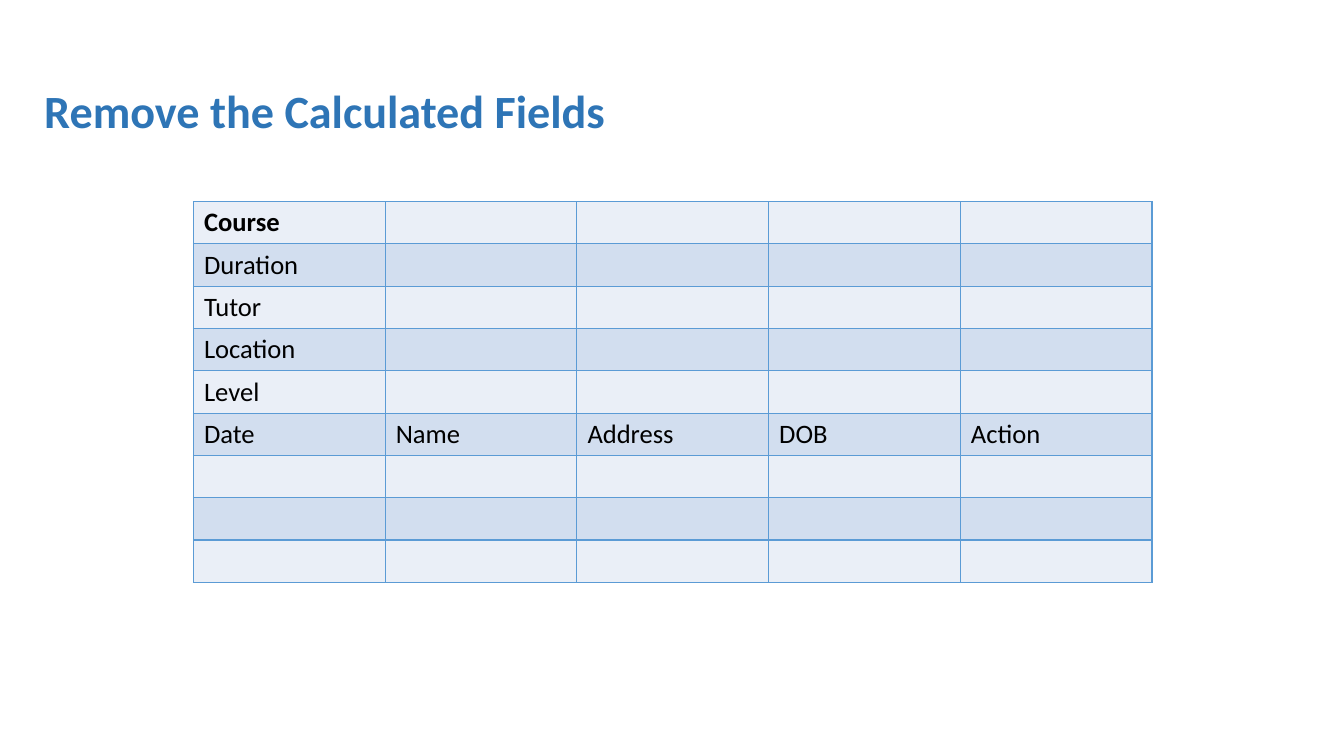
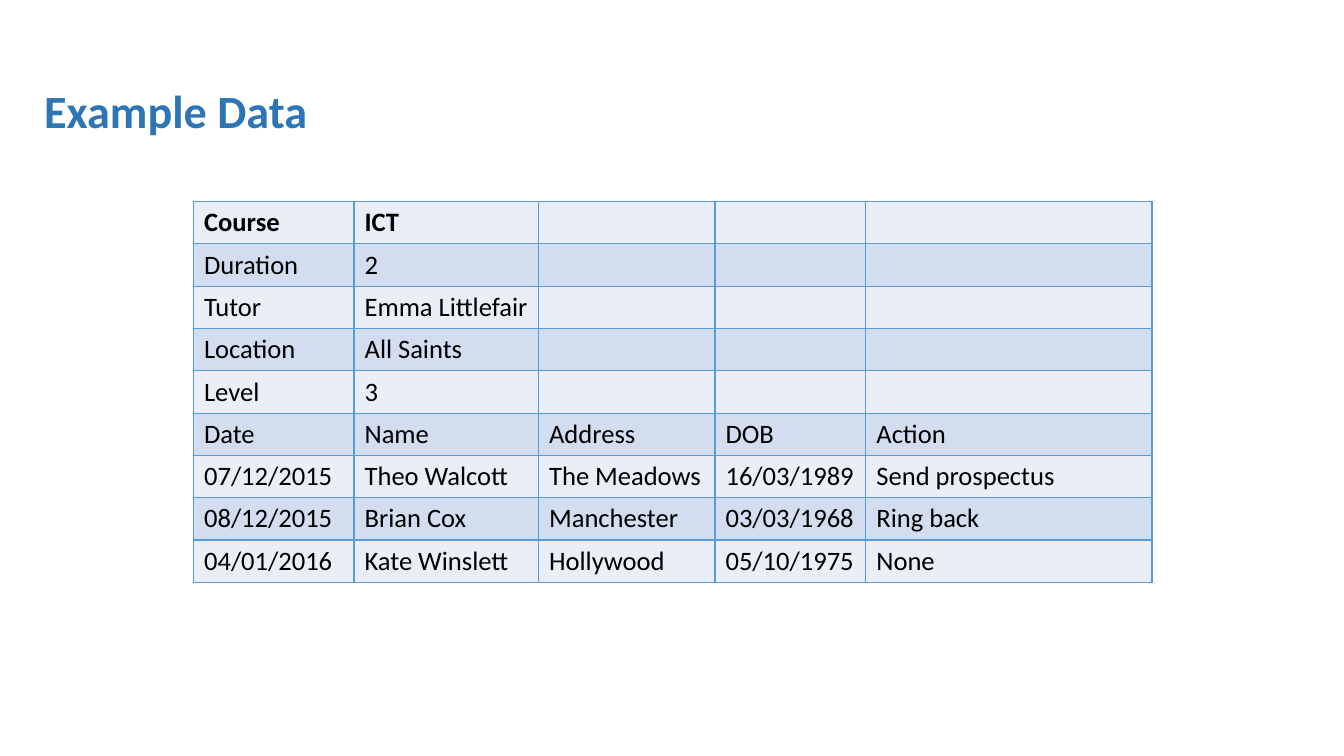
from dataclasses import dataclass

from lxml.etree import SubElement
from pptx import Presentation
from pptx.dml.color import RGBColor
from pptx.enum.text import MSO_ANCHOR
from pptx.oxml.ns import qn
from pptx.util import Pt

# Shared style
FONT = "Calibri"
TITLE_COLOUR = "2E75B6"
TEXT_COLOUR = "000000"
BORDER_COLOUR = "5B9BD5"
BAND_FILLS = ("EAEFF7", "D2DEEF")
TITLE_SIZE = 33
CELL_SIZE = 19

# Shared geometry, in points
SLIDE_WIDTH, SLIDE_HEIGHT = 960, 540
TITLE_FRAME = (24.5, 28.8, 913, 104.4)
TABLE_LEFT, TABLE_TOP = 138.2, 144
ROW_HEIGHT = 30.24
CELL_MARGIN_X, CELL_MARGIN_Y = 7.6, 3.6

COLUMN_HEADINGS = ("Date", "Name", "Address", "DOB", "Action")


@dataclass(frozen=True)
class FormSlide:
    title: str
    column_widths: tuple[float, ...]
    rows: tuple[tuple[str, ...], ...]


FORM_SLIDES = (
    FormSlide(
        "Remove the Calculated Fields",
        (136.95,) * 5,
        (("Course",), ("Duration",), ("Tutor",), ("Location",), ("Level",),
         COLUMN_HEADINGS, (), (), ()),
    ),
    FormSlide(
        "Example Data",
        (114.7, 131.8, 126, 107.8, 204.5),
        (
            ("Course", "ICT"),
            ("Duration", "2"),
            ("Tutor", "Emma Littlefair"),
            ("Location", "All Saints"),
            ("Level", "3"),
            COLUMN_HEADINGS,
            ("07/12/2015", "Theo Walcott", "The Meadows", "16/03/1989", "Send prospectus"),
            ("08/12/2015", "Brian Cox", "Manchester", "03/03/1968", "Ring back"),
            ("04/01/2016", "Kate Winslett", "Hollywood", "05/10/1975", "None"),
        ),
    ),
)


def colour(value: str) -> RGBColor:
    return RGBColor.from_string(value)


def add_span(para, text: str, size: float, text_colour: str, bold: bool) -> None:
    span = para.add_run()
    span.text = text
    span.font.name = FONT
    span.font.size = Pt(size)
    span.font.bold = bold
    span.font.color.rgb = colour(text_colour)


def add_title(page, text: str) -> None:
    box = page.shapes.add_textbox(*map(Pt, TITLE_FRAME))
    frame = box.text_frame
    frame.word_wrap = True
    frame.vertical_anchor = MSO_ANCHOR.MIDDLE
    para = frame.paragraphs[0]
    para.line_spacing = 0.9
    add_span(para, text, TITLE_SIZE, TITLE_COLOUR, bold=True)


def add_borders(cell) -> None:
    properties = cell._tc.get_or_add_tcPr()
    for side in ("a:lnL", "a:lnR", "a:lnT", "a:lnB"):
        line = SubElement(properties, qn(side), w=str(Pt(1)))
        fill = SubElement(line, qn("a:solidFill"))
        SubElement(fill, qn("a:srgbClr"), val=BORDER_COLOUR)


def style_cell(cell, fill: str) -> None:
    cell.margin_left = cell.margin_right = Pt(CELL_MARGIN_X)
    cell.margin_top = cell.margin_bottom = Pt(CELL_MARGIN_Y)
    add_borders(cell)
    cell.fill.solid()
    cell.fill.fore_color.rgb = colour(fill)


def add_form_table(page, form: FormSlide) -> None:
    row_count, column_count = len(form.rows), len(form.column_widths)
    table = page.shapes.add_table(
        row_count, column_count, Pt(TABLE_LEFT), Pt(TABLE_TOP),
        Pt(sum(form.column_widths)), Pt(ROW_HEIGHT * row_count),
    ).table
    table.first_row = table.horz_banding = False

    for column, width in zip(table.columns, form.column_widths):
        column.width = Pt(width)

    for row_index, (row, texts) in enumerate(zip(table.rows, form.rows)):
        row.height = Pt(ROW_HEIGHT)
        for cell in row.cells:
            style_cell(cell, BAND_FILLS[row_index % 2])
        for cell, text in zip(row.cells, texts):
            para = cell.text_frame.paragraphs[0]
            add_span(para, text, CELL_SIZE, TEXT_COLOUR, bold=row_index == 0)


def main() -> None:
    deck = Presentation()
    deck.slide_width, deck.slide_height = Pt(SLIDE_WIDTH), Pt(SLIDE_HEIGHT)
    blank_layout = deck.slide_layouts[6]
    for form in FORM_SLIDES:
        page = deck.slides.add_slide(blank_layout)
        add_title(page, form.title)
        add_form_table(page, form)
    deck.save("out.pptx")


if __name__ == "__main__":
    main()
